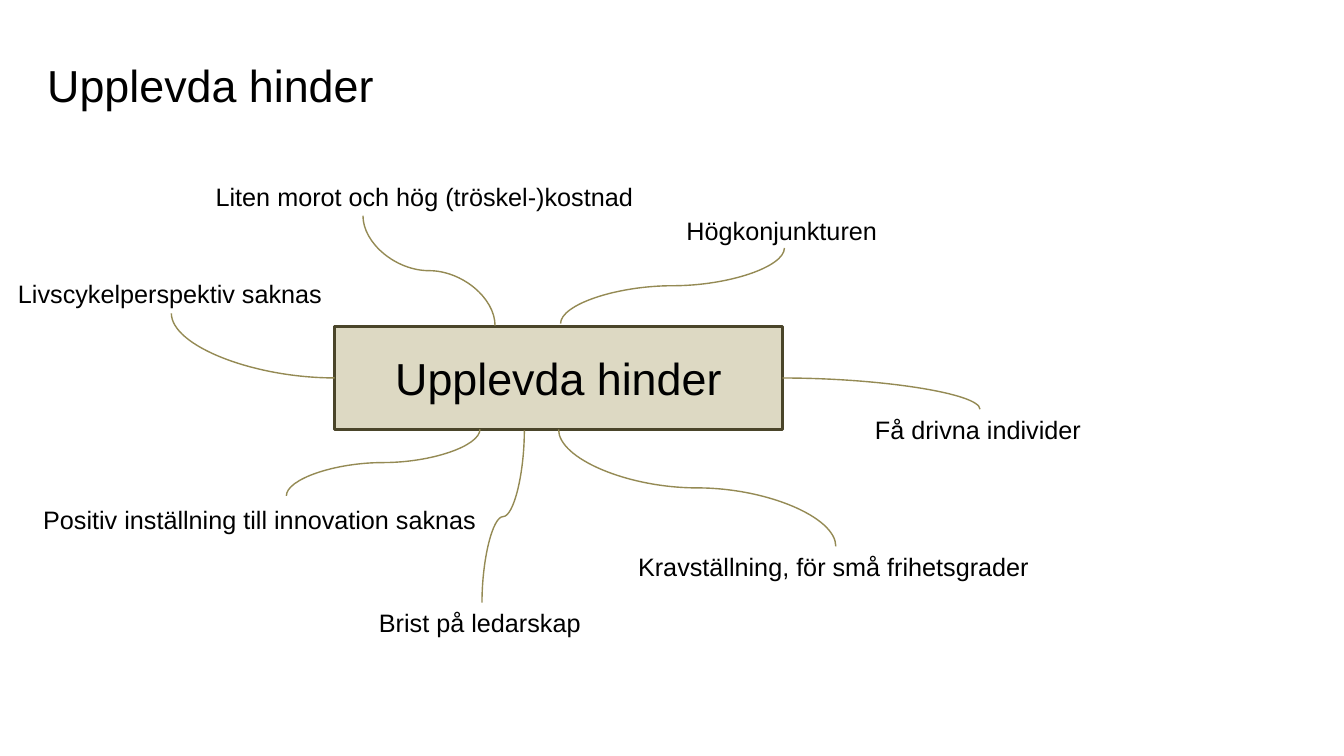
import pptx
import pptx.dml.color
import pptx.enum.shapes
import pptx.enum.text
import pptx.oxml
import pptx.oxml.ns
import pptx.util
from pptx.util import Inches

BLACK = pptx.dml.color.RGBColor(0x00, 0x00, 0x00)
BEIGE = pptx.dml.color.RGBColor(0xDD, 0xD9, 0xC3)
DARK_OLIVE = pptx.dml.color.RGBColor(0x4A, 0x45, 0x2A)
OLIVE = pptx.dml.color.RGBColor(0x94, 0x8A, 0x54)

TOPIC = "Upplevda hinder"
LABEL_HEIGHT = 0.4
LABELS = [
    ("Högkonjunkturen", 6.71, 2.09, 2.11),
    ("Få drivna individer", 8.58, 4.06, 2.26),
    ("Kravställning, för små frihetsgrader", 6.23, 5.42, 4.11),
    ("Brist på ledarskap", 3.66, 5.98, 2.22),
    ("Positiv inställning till innovation saknas", 0.33, 4.95, 4.54),
    ("Liten morot och hög (tröskel-)kostnad", 2.04, 1.75, 4.38),
    ("Livscykelperspektiv saknas", 0.08, 2.71, 3.25),
]
SIDE_CURVES = [
    ((3.32, 3.75), (1.7, 3.11), 1),
    ((7.76, 3.75), (9.72, 4.06), 3),
]
VERTICAL_CURVES = [
    ((3.6, 2.14), (4.91, 3.23)),
    ((7.78, 2.46), (5.56, 3.21)),
    ((8.29, 5.42), (5.54, 4.26)),
    ((4.78, 5.98), (5.2, 4.27)),
    ((2.84, 4.92), (4.76, 4.26)),
]


def write_text(shape, text, size):
    """Put one line of black Arial text in a shape."""
    paragraph = shape.text_frame.paragraphs[0]
    paragraph.text = text
    paragraph.font.name = "Arial"
    paragraph.font.size = pptx.util.Pt(size)
    paragraph.font.color.rgb = BLACK
    return paragraph


def add_title(slide):
    """Add the slide heading."""
    title = slide.shapes.add_textbox(Inches(0.37), Inches(0.3), Inches(9.03), Inches(1.07))
    title.text_frame.word_wrap = True
    title.text_frame.vertical_anchor = pptx.enum.text.MSO_ANCHOR.MIDDLE
    write_text(title, TOPIC, 32)


def add_topic_box(slide):
    """Add the central box of the mind map."""
    box = slide.shapes.add_shape(
        pptx.enum.shapes.MSO_SHAPE.RECTANGLE,
        Inches(3.32), Inches(3.24), Inches(4.44), Inches(1.02),
    )
    box.shadow.inherit = False
    box.fill.solid()
    box.fill.fore_color.rgb = BEIGE
    box.line.color.rgb = DARK_OLIVE
    box.line.width = pptx.util.Pt(2.25)
    box.text_frame.vertical_anchor = pptx.enum.text.MSO_ANCHOR.MIDDLE
    write_text(box, TOPIC, 32).alignment = pptx.enum.text.PP_ALIGN.CENTER
    return box


def add_label(slide, text, left, top, width):
    """Add one obstacle around the central box."""
    label = slide.shapes.add_textbox(
        Inches(left), Inches(top), Inches(width), Inches(LABEL_HEIGHT)
    )
    label.text_frame.word_wrap = False
    label.text_frame.auto_size = pptx.enum.text.MSO_AUTO_SIZE.SHAPE_TO_FIT_TEXT
    write_text(label, text, 18)


def add_curve(slide, start, end):
    """Add a curved connector that leaves its start horizontally."""
    connector = slide.shapes.add_connector(
        pptx.enum.shapes.MSO_CONNECTOR.CURVE, *map(Inches, (*start, *end))
    )
    connector.line.color.rgb = OLIVE
    connector.line.width = pptx.util.Pt(1)
    properties = connector._element.spPr
    properties.append(pptx.oxml.parse_xml(
        f'<a:effectLst {pptx.oxml.ns.nsdecls("a")}/>'
    ))
    return connector


def add_side_curve(slide, box, start, end, side):
    """Add a single bend from a side of the box to a label."""
    connector = add_curve(slide, start, end)
    geometry = connector._element.spPr.find(pptx.oxml.ns.qn("a:prstGeom"))
    geometry.set("prst", "curvedConnector2")
    connector.begin_connect(box, side)


def add_vertical_curve(slide, start, end):
    """Add an S-curve with vertical ends by a quarter turn about its centre."""
    center_x = (start[0] + end[0]) / 2
    center_y = (start[1] + end[1]) / 2
    half_x = (end[0] - start[0]) / 2
    half_y = (end[1] - start[1]) / 2
    connector = add_curve(
        slide,
        (center_x - half_y, center_y + half_x),
        (center_x + half_y, center_y - half_x),
    )
    transform = connector._element.spPr.find(pptx.oxml.ns.qn("a:xfrm"))
    transform.set("rot", "5400000")


def main():
    """Build the mind map of perceived obstacles."""
    presentation = pptx.Presentation()
    presentation.slide_width = Inches(13.33)
    presentation.slide_height = Inches(7.5)
    slide = presentation.slides.add_slide(presentation.slide_layouts[6])
    add_title(slide)
    box = add_topic_box(slide)
    for label in LABELS:
        add_label(slide, *label)
    for start, end, side in SIDE_CURVES:
        add_side_curve(slide, box, start, end, side)
    for start, end in VERTICAL_CURVES:
        add_vertical_curve(slide, start, end)
    presentation.save("out.pptx")


if __name__ == "__main__":
    main()
